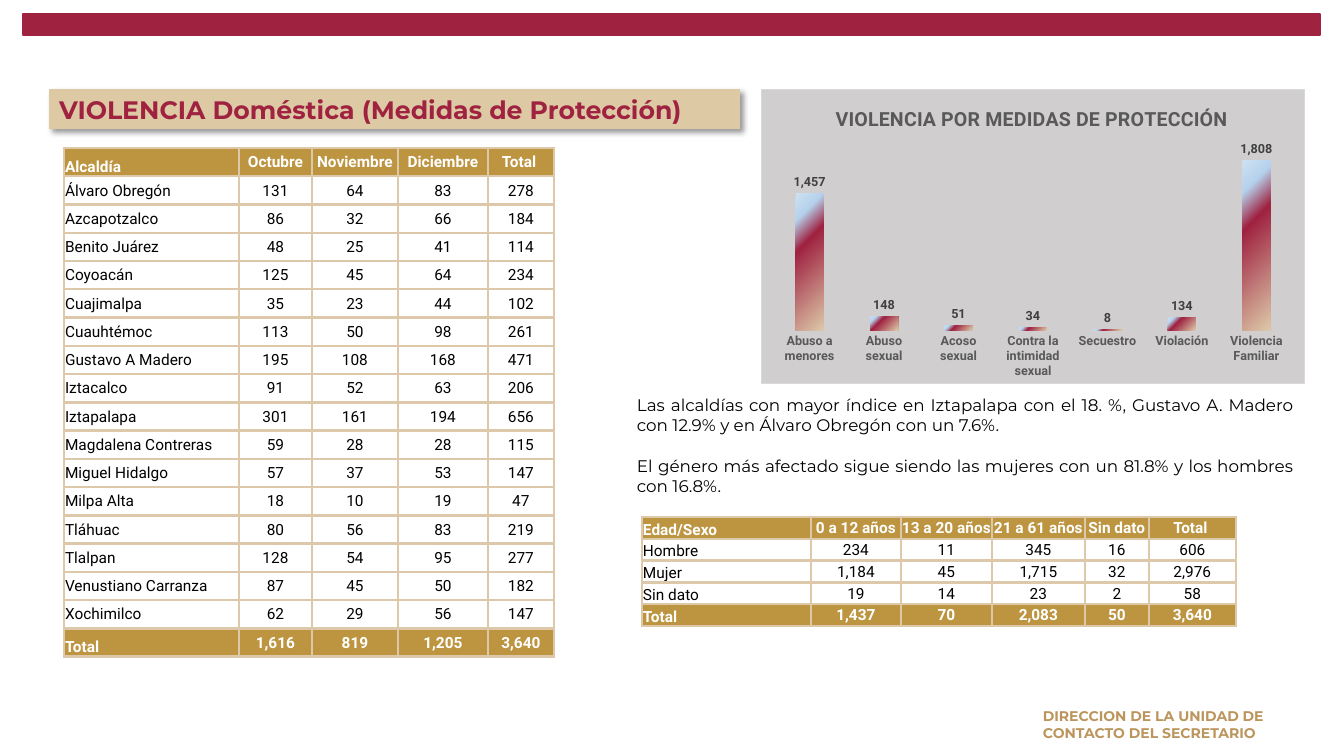
import pptx
import pptx.chart.data
import pptx.dml.color
import pptx.enum.chart
import pptx.enum.shapes
import pptx.enum.text
import pptx.oxml
import pptx.oxml.ns
import pptx.util

RGBColor = pptx.dml.color.RGBColor
ALIGN = pptx.enum.text.PP_ALIGN
ANCHOR = pptx.enum.text.MSO_ANCHOR
EMU_PER_PX = 914400 / 100.8

WINE = RGBColor(0x9F, 0x22, 0x41)
SAND = RGBColor(0xDD, 0xC9, 0xA3)
BORDER = RGBColor(0xDD, 0xC9, 0xA9)
GOLD = RGBColor(0xBD, 0x95, 0x41)
BRONZE = RGBColor(0xBC, 0x95, 0x5C)
BLACK = RGBColor(0, 0, 0)
WHITE = RGBColor(255, 255, 255)
CHARCOAL = RGBColor(0x40, 0x40, 0x40)
GRAY = RGBColor(0x59, 0x59, 0x59)
PANEL = RGBColor(0xD0, 0xCE, 0xCE)
PANEL_EDGE = RGBColor(0xD9, 0xD9, 0xD9)
PALE_BLUE = RGBColor(0xB5, 0xD2, 0xEC)
ICE_BLUE = RGBColor(0xCE, 0xE1, 0xF2)
BAR_STOPS = [(0, BORDER), (64, WINE), (83, PALE_BLUE), (100, ICE_BLUE)]

BOROUGHS = [
    ("Alcaldía", "Octubre", "Noviembre", "Diciembre", "Total "),
    ("Álvaro Obregón", 131, 64, 83, 278),
    ("Azcapotzalco", 86, 32, 66, 184),
    ("Benito Juárez", 48, 25, 41, 114),
    ("Coyoacán", 125, 45, 64, 234),
    ("Cuajimalpa", 35, 23, 44, 102),
    ("Cuauhtémoc", 113, 50, 98, 261),
    ("Gustavo A Madero", 195, 108, 168, 471),
    ("Iztacalco", 91, 52, 63, 206),
    ("Iztapalapa", 301, 161, 194, 656),
    ("Magdalena Contreras", 59, 28, 28, 115),
    ("Miguel Hidalgo", 57, 37, 53, 147),
    ("Milpa Alta", 18, 10, 19, 47),
    ("Tláhuac", 80, 56, 83, 219),
    ("Tlalpan", 128, 54, 95, 277),
    ("Venustiano Carranza", 87, 45, 50, 182),
    ("Xochimilco", 62, 29, 56, 147),
    ("Total", 1616, 819, 1205, 3640),
]
AGES = [
    ("Edad/Sexo", "0 a 12 años", "13 a 20 años", "21 a 61 años", "Sin dato", "Total "),
    ("Hombre", 234, 11, 345, 16, 606),
    ("Mujer", 1184, 45, 1715, 32, 2976),
    ("Sin dato", 19, 14, 23, 2, 58),
    ("Total", 1437, 70, 2083, 50, 3640),
]
OFFENCES = {
    "Abuso a menores": 1457, "Abuso sexual": 148, "Acoso sexual": 51,
    "Contra la intimidad sexual": 34, "Secuestro": 8, "Violación": 134,
    "Violencia Familiar": 1808,
}
FINDINGS = [
    "Las alcaldías con mayor índice en Iztapalapa con el 18. %, Gustavo A. Madero "
    "con 12.9% y en Álvaro Obregón con un 7.6%.",
    "El género más afectado sigue siendo las mujeres con un 81.8% y los hombres con 16.8%.",
]
OFFICE = ["DIRECCION DE LA UNIDAD DE", "CONTACTO DEL SECRETARIO"]


def px(*lengths):
    """Turn pixel lengths into a list of EMU."""
    return [pptx.util.Emu(round(length * EMU_PER_PX)) for length in lengths]


def xml(markup):
    """Build an element from markup whose tag ends with the namespace mark @."""
    return pptx.oxml.parse_xml(markup.replace("@", " " + pptx.oxml.ns.nsdecls("a", "c"), 1))


def style(font, name, size, color, bold=False):
    """Set the face, size, colour and weight of a font."""
    font.name, font.size, font.bold = name, pptx.util.Pt(size), bold
    font.color.rgb = color


def add_text(slide, box, lines, font, align=ALIGN.LEFT, anchor=ANCHOR.TOP, gap=0):
    """Place a wrapped text box with one paragraph per line."""
    frame = slide.shapes.add_textbox(*px(*box)).text_frame
    frame.word_wrap, frame.vertical_anchor = True, anchor
    frame.text = "\n".join(lines)
    for index, paragraph in enumerate(frame.paragraphs):
        paragraph.alignment = align
        paragraph.space_before = pptx.util.Pt(gap if index else 0)
        style(paragraph.runs[0].font, *font)


def add_top_bar(slide, box):
    """Draw the wine band along the top."""
    bar = slide.shapes.add_shape(pptx.enum.shapes.MSO_SHAPE.RECTANGLE, *px(*box))
    bar.shadow.inherit = False
    bar.fill.solid()
    bar.fill.fore_color.rgb = bar.line.color.rgb = WINE
    bar.line.width = pptx.util.Pt(1)


def add_banner(slide, box, text):
    """Format the title placeholder as a sand banner with a soft shadow."""
    title = slide.shapes.title
    title.left, title.top, title.width, title.height = px(*box)
    title.fill.solid()
    title.fill.fore_color.rgb = SAND
    title.element.spPr.append(xml(
        '<a:effectLst@><a:outerShdw blurRad="50800" dist="38100" dir="2700000" algn="tl" '
        'rotWithShape="0"><a:srgbClr val="000000"><a:alpha val="40000"/></a:srgbClr>'
        '</a:outerShdw></a:effectLst>'))
    frame = title.text_frame
    frame.text = text
    frame.auto_size = pptx.enum.text.MSO_AUTO_SIZE.NONE
    frame.vertical_anchor = ANCHOR.MIDDLE
    frame.paragraphs[0].alignment = ALIGN.LEFT
    style(frame.paragraphs[0].runs[0].font, "Montserrat", 18, WINE, True)


def add_figures(slide, box, rows, widths, low_rows):
    """Place a table with gold first and last rows; low_rows have bottom-set labels."""
    left, top, height = box
    frame = slide.shapes.add_table(
        len(rows), len(widths), *px(left, top, sum(widths), height))
    table = frame.table
    table.horz_banding = False
    for column, width in zip(table.columns, px(*widths)):
        column.width = width
    for row, values in enumerate(rows):
        strong = row in (0, len(rows) - 1)
        for column, value in enumerate(values):
            cell = table.cell(row, column)
            cell.margin_left, cell.margin_top, cell.margin_right, cell.margin_bottom = px(1, 1, 1, 0)
            low = column == 0 and row in low_rows
            cell.vertical_anchor = ANCHOR.BOTTOM if low else ANCHOR.MIDDLE
            cell.text = value if isinstance(value, str) else f"{value:,}"
            paragraph = cell.text_frame.paragraphs[0]
            paragraph.alignment = ALIGN.CENTER if column else ALIGN.LEFT
            style(paragraph.runs[0].font, "Roboto", 11, WHITE if strong else BLACK, strong)
            if strong:
                cell.fill.solid()
                cell.fill.fore_color.rgb = GOLD
            else:
                cell.fill.background()
    for properties in frame.element.xpath(".//a:tcPr"):
        for index, side in enumerate("LRTB"):
            properties.insert(index, xml(
                f'<a:ln{side}@ w="25400"><a:solidFill><a:srgbClr val="{BORDER}"/>'
                f'</a:solidFill></a:ln{side}>'))


def set_layout(parent, index, target, **parts):
    """Give a chart part a manual layout in fractions of the chart."""
    for previous in parent.findall(pptx.oxml.ns.qn("c:layout")):
        parent.remove(previous)
    sizes = "".join(f'<c:{name} val="{value}"/>' for name, value in parts.items())
    parent.insert(index, xml(
        f'<c:layout@><c:manualLayout>{target}<c:xMode val="edge"/><c:yMode val="edge"/>'
        f'{sizes}</c:manualLayout></c:layout>'))


def add_offence_chart(slide, box):
    """Place the column chart of offences on its gray panel."""
    data = pptx.chart.data.CategoryChartData(number_format="#,##0")
    data.categories = list(OFFENCES)
    data.add_series("Series 1", list(OFFENCES.values()))
    kind = pptx.enum.chart.XL_CHART_TYPE.COLUMN_CLUSTERED
    chart = slide.shapes.add_chart(kind, *px(*box), data).chart
    chart.has_legend = False
    style(chart.font, "Roboto", 10, BLACK, True)
    chart.chart_title.text_frame.text = "VIOLENCIA POR MEDIDAS DE PROTECCIÓN"
    style(chart.chart_title.text_frame.paragraphs[0].runs[0].font, "Roboto", 14, GRAY, True)

    values, categories = chart.value_axis, chart.category_axis
    values.visible = values.has_major_gridlines = False
    values.minimum_scale, values.maximum_scale, values.major_unit = 0, 2000, 500
    categories.major_tick_mark = pptx.enum.chart.XL_TICK_MARK.NONE
    categories.format.line.fill.background()
    style(categories.tick_labels.font, "Roboto", 9, GRAY, True)

    plot = chart.plots[0]
    plot.gap_width, plot.vary_by_categories, plot.has_data_labels = 166, False, True
    labels = plot.data_labels
    labels.show_value = True
    labels.number_format, labels.number_format_is_linked = "#,##0", False
    labels.position = pptx.enum.chart.XL_LABEL_POSITION.OUTSIDE_END
    style(labels.font, "Roboto", 9, CHARCOAL, True)

    root = chart.element
    stops = "".join(f'<a:gs pos="{position * 1000}"><a:srgbClr val="{color}"/></a:gs>'
                    for position, color in BAR_STOPS)
    root.xpath(".//c:ser")[0].get_or_add_spPr().insert(0, xml(
        f'<a:gradFill@><a:gsLst>{stops}</a:gsLst><a:path path="circle">'
        '<a:fillToRect l="100000" t="100000"/></a:path></a:gradFill>'))
    root.xpath("c:chart")[0].addnext(xml(
        f'<c:spPr@><a:solidFill><a:srgbClr val="{PANEL}"/></a:solidFill><a:ln w="9525">'
        f'<a:solidFill><a:srgbClr val="{PANEL_EDGE}"/></a:solidFill></a:ln></c:spPr>'))
    set_layout(root.xpath("c:chart/c:title")[0], 1, "", x=0.13, y=0.04)
    set_layout(root.xpath("c:chart/c:plotArea")[0], 0, '<c:layoutTarget val="inner"/>',
               x=0.02, y=0.18, w=0.96, h=0.64)


def main():
    """Build the slide and save it."""
    presentation = pptx.Presentation()
    presentation.slide_width, presentation.slide_height = px(1344, 756)
    slide = presentation.slides.add_slide(presentation.slide_layouts[5])
    add_top_bar(slide, (23, 14, 1297, 21))
    add_banner(slide, (49, 89, 691, 40), "VIOLENCIA Doméstica (Medidas de Protección)")
    add_figures(slide, (64, 148, 509), BOROUGHS, (175, 73, 86, 90, 66), (0, 17))
    add_offence_chart(slide, (761, 89, 544, 295))
    add_text(slide, (627, 390, 677, 112), FINDINGS, ("Montserrat", 12, BLACK),
             align=ALIGN.JUSTIFY, gap=14.6)
    add_figures(slide, (642, 517, 109), AGES, (169, 90, 91, 93, 64, 87), range(5))
    add_text(slide, (1033, 707, 250, 35), OFFICE, ("Montserrat", 10, BRONZE, True),
             anchor=ANCHOR.MIDDLE)
    presentation.save("out.pptx")


if __name__ == "__main__":
    main()
